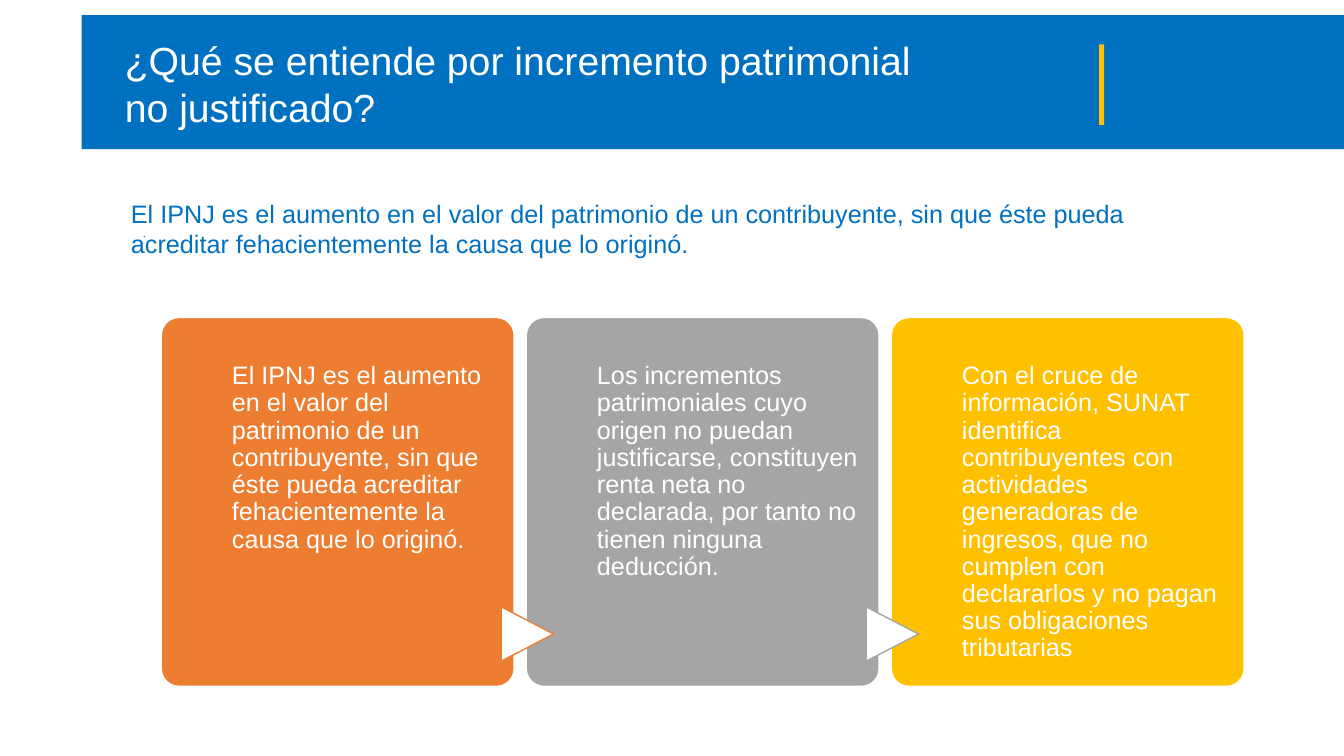
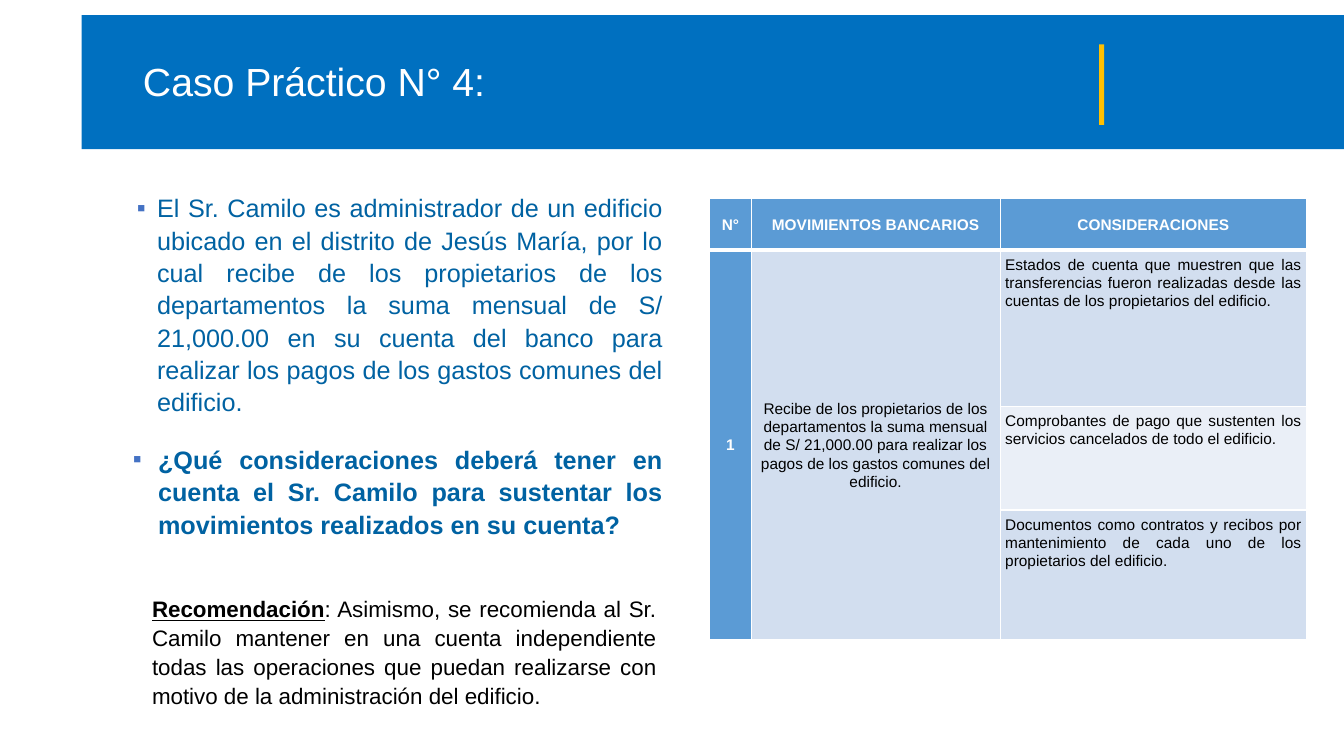
import dataclasses

import lxml.etree
import pptx
import pptx.dml.color
import pptx.enum.shapes
import pptx.enum.text
import pptx.oxml.ns
import pptx.util

Inches = pptx.util.Inches
Pt = pptx.util.Pt
SHAPE = pptx.enum.shapes.MSO_SHAPE
ALIGN = pptx.enum.text.PP_ALIGN
ANCHOR = pptx.enum.text.MSO_ANCHOR


@dataclasses.dataclass(frozen=True)
class Theme:
    font: str = "Arial"
    white: str = "FFFFFF"
    black: str = "000000"
    blue: str = "0070C0"
    navy: str = "0062A2"
    gold: str = "FFC000"
    orange: str = "ED7D31"
    gray: str = "A5A5A5"
    bullet: str = "4472C4"
    head: str = "5B9BD5"
    band: str = "D2DEEF"
    pale: str = "EAEFF7"
    title: int = 28
    body: int = 18
    note: int = 16
    cell: int = 11
    dot: int = 8


THEME = Theme()


def paint(fill, color):
    fill.solid()
    fill.fore_color.rgb = pptx.dml.color.RGBColor.from_string(color)


def add_node(parent, tag, **attrs):
    node = lxml.etree.SubElement(parent, pptx.oxml.ns.qn(tag))
    for name, value in attrs.items():
        node.set(name, str(value))
    return node


def write(frame, *runs, size=THEME.body, color=THEME.white, bold=False,
          align=ALIGN.LEFT, line=1.0, before=0, after=0,
          margin=0, indent=0, bullet=None):
    """Add one paragraph; a run is a text or a (text, {"bold", "underline"}) pair."""
    para = frame.paragraphs[-1]
    if para.runs:
        para = frame.add_paragraph()
        para.space_before = Pt(before)
    props = para._p.get_or_add_pPr()
    props.set("marL", str(Inches(margin)))
    props.set("indent", str(Inches(indent)))
    if bullet:
        add_node(add_node(props, "a:buClr"), "a:srgbClr", val=THEME.bullet)
        add_node(props, "a:buFont", typeface=THEME.font)
        add_node(props, "a:buChar", char=bullet)
    para.alignment = align
    para.line_spacing = line
    para.space_after = Pt(after)
    for item in runs:
        text, style = (item, {}) if isinstance(item, str) else item
        run = para.add_run()
        run.text = text
        run.font.name = THEME.font
        run.font.size = Pt(size)
        run.font.bold = style.get("bold", bold)
        run.font.underline = style.get("underline", False)
        run.font.color.rgb = pptx.dml.color.RGBColor.from_string(color)


def add_box(slide, left, top, width, height, anchor=ANCHOR.TOP):
    box = slide.shapes.add_textbox(*map(Inches, (left, top, width, height)))
    frame = box.text_frame
    frame.word_wrap = True
    frame.vertical_anchor = anchor
    return frame


def add_shape(slide, kind, left, top, width, height, fill, edge=None):
    shape = slide.shapes.add_shape(
        kind, *map(Inches, (left, top, width, height)))
    shape.shadow.inherit = False
    paint(shape.fill, fill)
    if edge:
        paint(shape.line.fill, edge)
        shape.line.width = Pt(1)
    else:
        shape.line.fill.background()
    return shape


def start_slide(deck, title, left, top, width, height, line=1.0):
    """Add a slide with the blue band, its gold mark and the title."""
    slide = deck.slides.add_slide(deck.slide_layouts[6])
    add_shape(slide, SHAPE.RECTANGLE, 0.81, 0.15, 12.52, 1.33, THEME.blue)
    add_shape(slide, SHAPE.RECTANGLE, 10.9, 0.44, 0.05, 0.8, THEME.gold)
    frame = add_box(slide, left, top, width, height, ANCHOR.MIDDLE)
    write(frame, title, size=THEME.title, line=line)
    return slide


def add_cards(slide, cards):
    """Add a row of cards, each pointing to the next with a white arrow."""
    pitch = 3.62
    for i, (text, color) in enumerate(cards):
        card = add_shape(slide, SHAPE.ROUNDED_RECTANGLE, 1.6 + i * pitch, 3.15,
                         3.5, 3.66, color, THEME.white)
        card.adjustments[0] = 0.05
        frame = card.text_frame
        frame.word_wrap = True
        frame.vertical_anchor = ANCHOR.TOP
        frame.margin_left, frame.margin_top = Inches(0.65), Inches(0.4)
        frame.margin_right, frame.margin_bottom = Inches(0.15), 0
        write(frame, text, line=0.9)
    for i, (text, color) in enumerate(cards[:-1]):
        arrow = add_shape(slide, SHAPE.FLOWCHART_EXTRACT, 4.96 + i * pitch,
                          6.03, 0.54, 0.52, THEME.white, color)
        arrow.rotation = 90


def set_edges(cell, top, bottom):
    props = cell._tc.get_or_add_tcPr()
    for tag, width in (("L", 1), ("R", 1), ("T", top), ("B", bottom)):
        edge = add_node(props, "a:ln" + tag, w=Pt(width))
        add_node(add_node(edge, "a:solidFill"), "a:srgbClr", val=THEME.white)


def fill_cell(cell, text, fill, head, align, anchor):
    cell.margin_left = cell.margin_right = Inches(0.05)
    cell.margin_top = cell.margin_bottom = Inches(0.05)
    cell.vertical_anchor = anchor
    paint(cell.fill, fill)
    if text:
        write(cell.text_frame, text, size=THEME.cell, bold=head, align=align,
              color=THEME.white if head else THEME.black, line=1.07, after=8)


def add_table(slide, rows, widths, heights):
    frame = slide.shapes.add_table(
        len(rows), len(widths), Inches(7.04), Inches(1.97),
        Inches(sum(widths)), Inches(sum(heights)))
    table = frame.table
    for col, width in zip(table.columns, widths):
        col.width = Inches(width)
    for row, height in zip(table.rows, heights):
        row.height = Inches(height)
    for r, row in enumerate(rows):
        for c, text in enumerate(row):
            cell = table.cell(r, c)
            head = r == 0 or c == 0
            listed = r > 0 and c == 2
            fill = THEME.pale if listed and r % 2 == 0 else THEME.band
            set_edges(cell, 3 if r == 1 else 1, 3 if r == 0 else 1)
            fill_cell(cell, text, THEME.head if head else fill, head,
                      ALIGN.JUSTIFY if listed else ALIGN.CENTER,
                      ANCHOR.TOP if listed else ANCHOR.MIDDLE)
    for c in (0, 1):
        table.cell(1, c).merge(table.cell(len(rows) - 1, c))


def build_concept(deck):
    slide = start_slide(
        deck, "¿Qué se entiende por incremento patrimonial no justificado?",
        1.14, 0.38, 8.2, 0.9)
    meaning = ("El IPNJ es el aumento en el valor del patrimonio de un "
               "contribuyente, sin que éste pueda acreditar fehacientemente "
               "la causa que lo originó.")
    write(add_box(slide, 1.32, 2.21, 11.5, 4.76), ".",
          size=THEME.dot, color=THEME.navy, line=0.9)
    write(add_box(slide, 1.2, 1.92, 10.75, 0.71), meaning, color=THEME.blue)
    add_cards(slide, [
        (meaning, THEME.orange),
        ("Los incrementos patrimoniales cuyo origen no puedan justificarse, "
         "constituyen renta neta no declarada, por tanto no tienen ninguna "
         "deducción.", THEME.gray),
        ("Con el cruce de información, SUNAT identifica contribuyentes con "
         "actividades generadoras de ingresos, que no cumplen con "
         "declararlos y no pagan sus obligaciones tributarias", THEME.gold),
    ])


def build_case(deck):
    slide = start_slide(deck, "Caso Práctico N° 4:",
                        1.32, 0.36, 6.1, 0.95, line=0.9)
    prose = dict(align=ALIGN.JUSTIFY, line=1.07, after=8)
    points = dict(prose, color=THEME.navy, before=10, bullet="▪")
    frame = add_box(slide, 0.97, 1.84, 5.7, 4.24)
    write(frame,
          "El Sr. Camilo es administrador de un edificio ubicado en el "
          "distrito de Jesús María, por lo cual recibe de los propietarios "
          "de los departamentos la suma mensual de S/ 21,000.00 en su cuenta "
          "del banco para realizar los pagos de los gastos comunes del "
          "edificio.", margin=0.49, indent=-0.2, **points)
    write(frame,
          "¿Qué consideraciones deberá tener en cuenta el Sr. Camilo para "
          "sustentar los movimientos realizados en su cuenta?",
          bold=True, margin=0.5, indent=-0.25, **points)
    add_table(slide, [
        ("N°", "MOVIMIENTOS BANCARIOS", "CONSIDERACIONES"),
        ("1",
         "Recibe de los propietarios de los departamentos la suma mensual de "
         "S/ 21,000.00 para realizar los pagos de los gastos comunes del "
         "edificio.",
         "Estados de cuenta que muestren que las transferencias fueron "
         "realizadas desde las cuentas de los propietarios del edificio."),
        ("", "",
         "Comprobantes de pago que sustenten los servicios cancelados de "
         "todo el edificio."),
        ("", "",
         "Documentos como contratos y recibos por mantenimiento de cada uno "
         "de los propietarios del edificio."),
    ], (0.41, 2.47, 3.04), (0.51, 1.55, 1.03, 1.29))
    write(add_box(slide, 0.91, 5.84, 5.7, 1.23),
          ("Recomendación", {"bold": True, "underline": True}),
          ": Asimismo, se recomienda al Sr. Camilo mantener en una cuenta "
          "independiente todas las operaciones que puedan realizarse con "
          "motivo de la administración del edificio.",
          size=THEME.note, color=THEME.black, margin=0.5, **prose)


def main():
    deck = pptx.Presentation()
    deck.slide_width, deck.slide_height = Inches(13.33), Inches(7.5)
    build_concept(deck)
    build_case(deck)
    deck.save("out.pptx")


if __name__ == "__main__":
    main()
